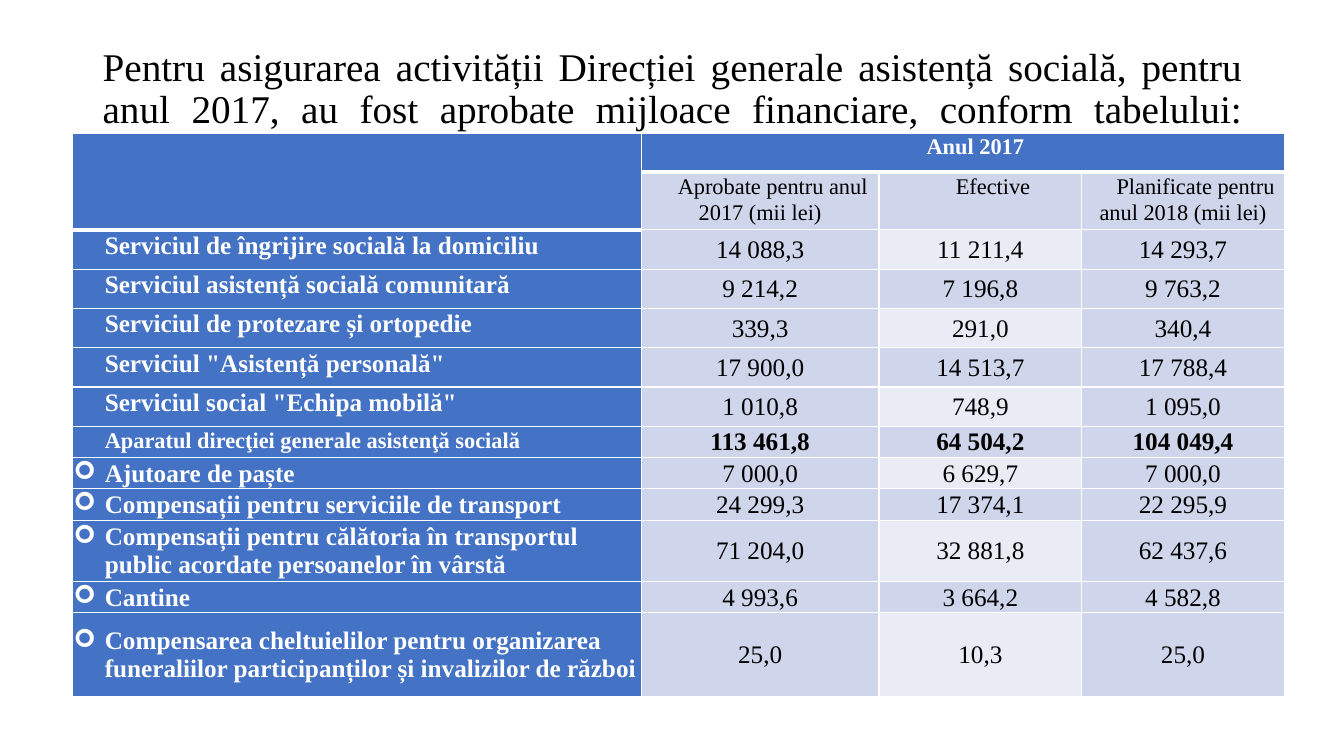
import pptx
import pptx.dml.color
import pptx.enum.text
import pptx.oxml.ns
import pptx.util
from lxml import etree

BLACK = pptx.dml.color.RGBColor(0x00, 0x00, 0x00)
WHITE = pptx.dml.color.RGBColor(0xFF, 0xFF, 0xFF)
BLUE = pptx.dml.color.RGBColor(0x44, 0x72, 0xC4)
PALE_BLUE = pptx.dml.color.RGBColor(0xCF, 0xD5, 0xEA)
LIGHT_BLUE = pptx.dml.color.RGBColor(0xE9, 0xEB, 0xF5)

ALIGN = pptx.enum.text.PP_ALIGN
MIDDLE = pptx.enum.text.MSO_ANCHOR.MIDDLE
TOP = pptx.enum.text.MSO_ANCHOR.TOP
qualified = pptx.oxml.ns.qn

TITLE = ("Pentru asigurarea activității Direcției generale asistență socială, "
         "pentru anul 2017, au fost aprobate mijloace financiare, conform tabelului:")
YEAR = "Anul 2017"
HEADINGS = ["Aprobate pentru anul 2017 (mii lei)", "Efective",
            "Planificate pentru anul 2018 (mii lei)"]
SERVICES = [
    ("Serviciul de îngrijire socială la domiciliu", "14 088,3", "11 211,4", "14 293,7"),
    ("Serviciul asistență socială comunitară", "9 214,2", "7 196,8", "9 763,2"),
    ("Serviciul de protezare și ortopedie", "339,3", "291,0", "340,4"),
    ('Serviciul "Asistență personală"', "17 900,0", "14 513,7", "17 788,4"),
    ('Serviciul social "Echipa mobilă"', "1 010,8", "748,9", "1 095,0"),
]
OFFICE = ("Aparatul direcţiei generale asistenţă socială", "113 461,8", "64 504,2", "104 049,4")
BENEFITS = [
    ("Ajutoare de paște", "7 000,0", "6 629,7", "7 000,0"),
    ("Compensații pentru serviciile de transport", "24 299,3", "17 374,1", "22 295,9"),
    ("Compensații pentru călătoria în transportul public acordate persoanelor în vârstă",
     "71 204,0", "32 881,8", "62 437,6"),
    ("Cantine", "4 993,6", "3 664,2", "4 582,8"),
    ("Compensarea cheltuielilor pentru organizarea funeraliilor participanților "
     "și invalizilor de război", "25,0", "10,3", "25,0"),
]
COLUMN_SHARES = [42.31, 17.7, 15.08, 15.08]
ROW_SHARES = [5.2, 7.07] + [5.2] * 5 + [4, 4, 4, 7.87, 4, 11.07]


def write_text(frame, text, size=18, color=BLACK, bold=False, align=ALIGN.LEFT,
               spacing=1.0, margin=0, indent=0, bullet=None):
    paragraph = frame.paragraphs[0]
    paragraph.alignment = align
    paragraph.line_spacing = spacing
    run = paragraph.add_run()
    run.text = text
    run.font.name = Deck.font
    run.font.size = pptx.util.Pt(size)
    run.font.bold = bold
    run.font.color.rgb = color
    properties = paragraph._p.get_or_add_pPr()
    properties.set("marL", str(pptx.util.Inches(margin)))
    properties.set("indent", str(pptx.util.Inches(indent)))
    if bullet:
        etree.SubElement(properties, qualified("a:buFont"), typeface="Wingdings")
        etree.SubElement(properties, qualified("a:buChar"), char=bullet)
    return paragraph


class Deck:
    font = "Times New Roman"

    def __init__(self):
        self.presentation = pptx.Presentation()
        self.presentation.slide_width = pptx.util.Inches(13.33)
        self.presentation.slide_height = pptx.util.Inches(7.5)
        self.slide = self.presentation.slides.add_slide(self.presentation.slide_layouts[6])

    def across(self, share):
        return round(self.presentation.slide_width * share / 100)

    def down(self, share):
        return round(self.presentation.slide_height * share / 100)

    def title(self, text, left, top, width, height, size):
        shape = self.slide.shapes.add_textbox(
            self.across(left), self.down(top), self.across(width), self.down(height))
        frame = shape.text_frame
        frame.word_wrap = True
        frame.vertical_anchor = MIDDLE
        paragraph = write_text(frame, text, size=size, align=ALIGN.JUSTIFY, spacing=0.9)
        paragraph.add_line_break()
        points = str(size * 100)
        line_break = paragraph._p.findall(qualified("a:br"))[-1]
        etree.SubElement(line_break, qualified("a:rPr"), sz=points)
        etree.SubElement(paragraph._p, qualified("a:endParaRPr"), sz=points)

    def table(self, left, top, column_shares, row_shares):
        widths = [self.across(share) for share in column_shares]
        heights = [self.down(share) for share in row_shares]
        shape = self.slide.shapes.add_table(
            len(heights), len(widths), self.across(left), self.down(top),
            sum(widths), sum(heights))
        table = shape.table
        table.horz_banding = False
        for column, width in zip(table.columns, widths):
            column.width = width
        for row, height in zip(table.rows, heights):
            row.height = height
        return table

    def cell(self, cell, fill, text="", anchor=TOP, inset=0.07, inset_top=0,
             thick_top=False, thick_bottom=False, **text_format):
        cell.margin_left = cell.margin_right = pptx.util.Inches(inset)
        cell.margin_top = pptx.util.Inches(inset_top)
        cell.margin_bottom = 0
        cell.vertical_anchor = anchor
        cell.fill.solid()
        cell.fill.fore_color.rgb = fill
        borders = [("L", 1), ("R", 1), ("T", 3 if thick_top else 1),
                   ("B", 3 if thick_bottom else 1)]
        properties = cell._tc.get_or_add_tcPr()
        for position, (side, points) in enumerate(borders):
            line = etree.Element(qualified(f"a:ln{side}"), w=str(pptx.util.Pt(points)))
            solid = etree.SubElement(line, qualified("a:solidFill"))
            etree.SubElement(solid, qualified("a:srgbClr"), val=str(WHITE))
            properties.insert(position, line)
        if text:
            write_text(cell.text_frame, text, **text_format)


def fill_header(deck, table):
    indented = dict(size=16, align=ALIGN.CENTER, spacing=1.07, indent=0.25)
    deck.cell(table.cell(0, 0), BLUE, thick_bottom=True)
    deck.cell(table.cell(1, 0), BLUE, thick_bottom=True)
    deck.cell(table.cell(0, 1), BLUE, YEAR, thick_bottom=True,
              color=WHITE, bold=True, **indented)
    for column in (2, 3):
        deck.cell(table.cell(0, column), BLUE, thick_bottom=True)
    for column, heading in enumerate(HEADINGS, start=1):
        deck.cell(table.cell(1, column), PALE_BLUE, heading, thick_top=True, **indented)
    table.cell(0, 0).merge(table.cell(1, 0))
    table.cell(0, 1).merge(table.cell(0, 3))


def fill_body(deck, table):
    tight = dict(anchor=MIDDLE, inset=0.01, inset_top=0.01)
    service_label = dict(spacing=1.07, indent=0.25)
    office_label = dict(service_label, size=16, align=ALIGN.JUSTIFY)
    benefit_label = dict(tight, margin=0.31, indent=-0.31, bullet="➢")
    records = ([(record, service_label) for record in SERVICES]
               + [(OFFICE, office_label)]
               + [(record, benefit_label) for record in BENEFITS])
    for row, ((label, *amounts), label_format) in enumerate(records, start=2):
        deck.cell(table.cell(row, 0), BLUE, label, thick_top=row == 2,
                  color=WHITE, bold=True, **label_format)
        for column, amount in enumerate(amounts, start=1):
            fill = LIGHT_BLUE if column == 2 and row % 2 == 0 else PALE_BLUE
            deck.cell(table.cell(row, column), fill, amount, align=ALIGN.CENTER,
                      bold=label == OFFICE[0], **tight)


def main():
    deck = Deck()
    deck.title(TITLE, left=6.9, top=5.33, width=86.27, height=19.33, size=28)
    table = deck.table(5.4, 17.6, COLUMN_SHARES, ROW_SHARES)
    fill_header(deck, table)
    fill_body(deck, table)
    deck.presentation.save("out.pptx")


if __name__ == "__main__":
    main()
